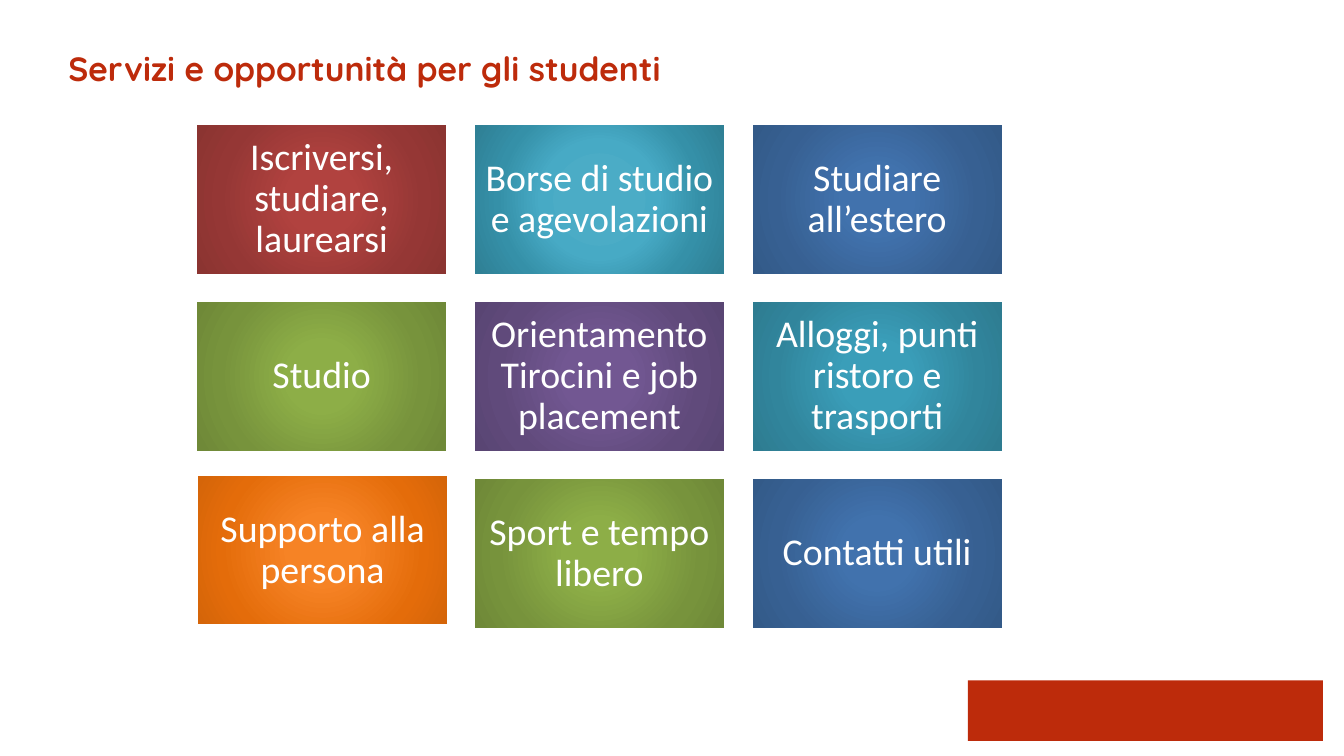
from lxml import etree
from pptx import Presentation
from pptx.dml.color import RGBColor
from pptx.enum.shapes import MSO_SHAPE as Shape
from pptx.enum.text import MSO_ANCHOR as Anchor, PP_ALIGN as Align
from pptx.oxml.ns import qn
from pptx.util import Inches, Pt

COLOURS = {"brand": "BD2B0B", "white": "FFFFFF"}

# Radial gradients, centre to edge: (percent, colour)
GRADIENTS = {
    "red": [(0, "B1423F"), (23, "B1423F"), (69, "953735"), (97, "8B3431")],
    "aqua": [(0, "4BACC6"), (23, "4BACC6"), (40, "47AAC5"), (69, "3590A8"), (97, "2F8095")],
    "blue": [(0, "4172AD"), (23, "4172AD"), (69, "376092"), (97, "335A88")],
    "green": [(0, "8DAE47"), (23, "8DAE47"), (69, "77933C"), (97, "6F8938")],
    "purple": [(0, "725792"), (23, "725792"), (69, "604A7B"), (97, "594573")],
    "teal": [(0, "3A9EB9"), (23, "3A9EB9"), (69, "31859C"), (97, "2E7C91")],
    "orange": [(0, "F68325"), (23, "F68325"), (69, "E46C0A"), (97, "D56509")],
}

# Services in reading order: (label, gradient)
SERVICES = [
    ("Iscriversi, studiare, laurearsi", "red"),
    ("Borse di studio e agevolazioni", "aqua"),
    ("Studiare all’estero", "blue"),
    ("Studio", "green"),
    ("Orientamento Tirocini e job placement", "purple"),
    ("Alloggi, punti ristoro e trasporti", "teal"),
    ("Supporto alla persona", "orange"),
    ("Sport e tempo libero", "green"),
    ("Contatti utili", "blue"),
]

# Tile grid, in inches
COLUMNS = 3
GRID_LEFT, GRID_TOP = 1.94, 1.23
TILE_WIDTH, TILE_HEIGHT = 2.5, 1.5
TILE_GAP = 0.255
NUDGES = {"Supporto alla persona": (0.01, -0.03)}

TITLE_FONT = {"name": "Quicksand", "size": Pt(24), "bold": True}
TILE_FONT = {"name": "Calibri", "size": Pt(27)}
TITLE_PARA = {"line_spacing": Pt(22), "alignment": Align.LEFT}
TILE_PARA = {"line_spacing": 0.9, "alignment": Align.CENTER}
TILE_FRAME = {"word_wrap": True, "vertical_anchor": Anchor.MIDDLE}
TILE_FRAME.update({f"margin_{side}": Inches(0.11) for side in ("left", "top", "right", "bottom")})


def apply(target, values):
    for name, value in values.items():
        setattr(target, name, value)


def colour(name):
    return RGBColor.from_string(COLOURS[name])


def write(frame, text, para_format, font_format, colour_name):
    para = frame.paragraphs[0]
    para.text = text
    apply(para, para_format)
    apply(para.font, font_format)
    para.font.color.rgb = colour(colour_name)


def add_rectangle(page, left, top, width, height):
    box = page.shapes.add_shape(
        Shape.RECTANGLE, Inches(left), Inches(top), Inches(width), Inches(height))
    box.shadow.inherit = False
    return box


def fill_radial(box, stops):
    box.fill.gradient()
    gradient = box.fill._xPr.find(qn("a:gradFill"))
    for child in list(gradient):
        gradient.remove(child)
    stop_list = etree.SubElement(gradient, qn("a:gsLst"))
    for percent, value in stops:
        stop = etree.SubElement(stop_list, qn("a:gs"), pos=str(percent * 1000))
        etree.SubElement(stop, qn("a:srgbClr"), val=value)
    shade = etree.SubElement(gradient, qn("a:path"), {"path": "circle"})
    centre = dict.fromkeys("ltrb", "50000")
    etree.SubElement(shade, qn("a:fillToRect"), centre)


def add_title(page, text):
    box = page.shapes.add_textbox(Inches(0.58), Inches(0.52), Inches(12.28), Inches(0.71))
    box.text_frame.word_wrap = True
    write(box.text_frame, text, TITLE_PARA, TITLE_FONT, "brand")


def add_tile(page, index, label, gradient):
    row, column = divmod(index, COLUMNS)
    shift_x, shift_y = NUDGES.get(label, (0, 0))
    left = GRID_LEFT + column * (TILE_WIDTH + TILE_GAP) + shift_x
    top = GRID_TOP + row * (TILE_HEIGHT + TILE_GAP) + shift_y
    tile = add_rectangle(page, left, top, TILE_WIDTH, TILE_HEIGHT)
    fill_radial(tile, GRADIENTS[gradient])
    tile.line.color.rgb = colour("white")
    tile.line.width = Pt(2)
    apply(tile.text_frame, TILE_FRAME)
    write(tile.text_frame, label, TILE_PARA, TILE_FONT, "white")


def add_footer_block(page):
    block = add_rectangle(page, 9.6, 6.75, 3.52, 0.6)
    block.fill.solid()
    block.fill.fore_color.rgb = colour("brand")
    block.line.fill.background()


def main():
    deck = Presentation()
    deck.slide_width, deck.slide_height = Inches(13.33), Inches(7.5)
    page = deck.slides.add_slide(deck.slide_layouts[6])

    # Footer and title
    add_footer_block(page)
    add_title(page, "Servizi e opportunità per gli studenti")

    # Service tiles
    for index, (label, gradient) in enumerate(SERVICES):
        add_tile(page, index, label, gradient)

    deck.save("out.pptx")


if __name__ == "__main__":
    main()
